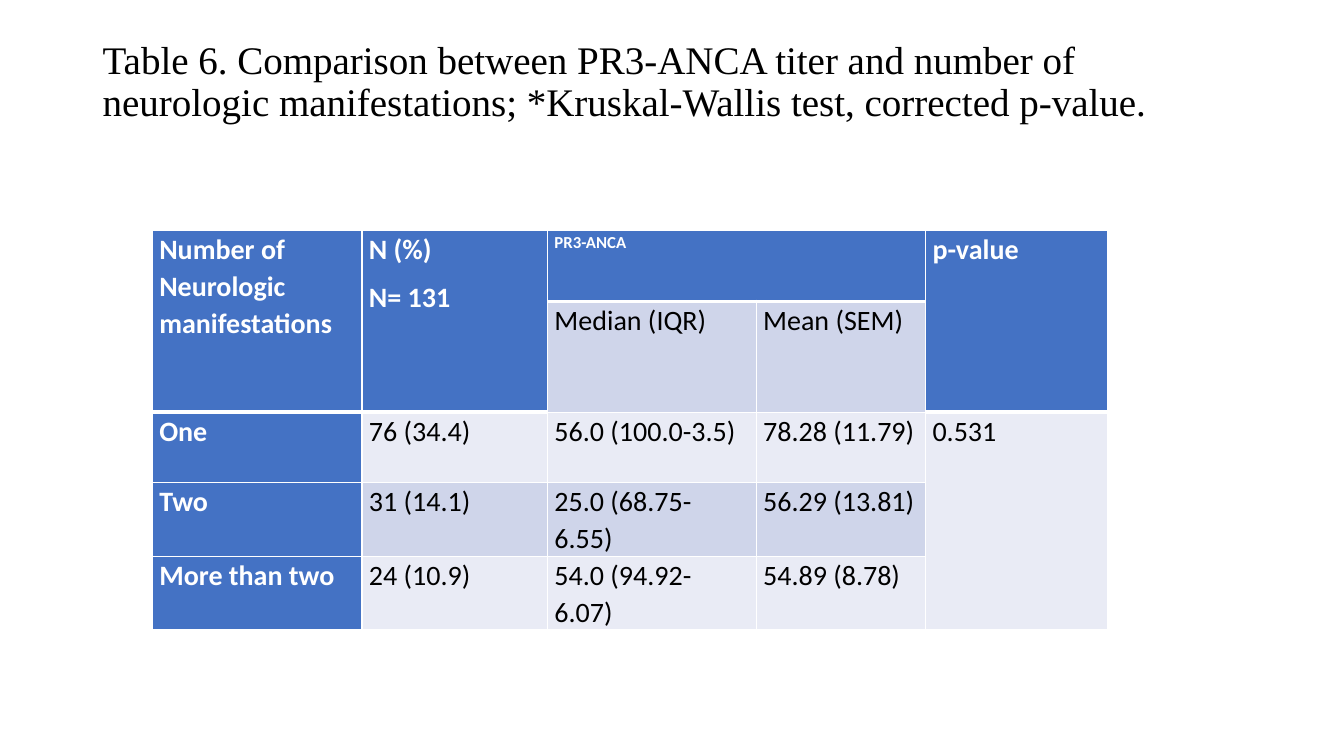
from lxml import etree
from pptx import Presentation
from pptx.dml.color import RGBColor
from pptx.enum import text
from pptx.oxml import ns
from pptx.util import Inches, Pt

COLORS = {"ink": "000000", "white": "FFFFFF", "header": "4472C4",
          "dark_band": "CFD5EA", "light_band": "E9EBF5"}

TITLE = ("Table 6. Comparison between PR3-ANCA titer and number of neurologic "
         "manifestations; *Kruskal-Wallis test, corrected p-value.")
COLUMN_WIDTHS = [2.08, 1.84, 2.07, 1.68, 1.81]
ROW_HEIGHTS = [0.7, 1.1, 0.7, 0.73, 0.73]
ROWS = [
    ["Number of Neurologic manifestations", "N (%)\nN= 131", "PR3-ANCA", "", "p-value"],
    ["", "", "Median (IQR)", "Mean (SEM)", ""],
    ["One", "76 (34.4)", "56.0 (100.0-3.5)", "78.28 (11.79)", "0.531"],
    ["Two", "31 (14.1)", "25.0 (68.75-6.55)", "56.29 (13.81)", ""],
    ["More than two", "24 (10.9)", "54.0 (94.92-6.07)", "54.89 (8.78)", ""],
]
# First and last cell of each merged area, as (row, column)
MERGES = [((0, 0), (1, 0)), ((0, 1), (1, 1)), ((0, 2), (0, 3)),
          ((0, 4), (1, 4)), ((2, 4), (4, 4))]
HEADING_SIZES = {"PR3-ANCA": 12}


def rgb(name):
    return RGBColor.from_string(COLORS[name])


def add_title(slide, left, top, width, height):
    frame = slide.shapes.add_textbox(
        Inches(left), Inches(top), Inches(width), Inches(height)).text_frame
    frame.word_wrap = True
    frame.vertical_anchor = text.MSO_ANCHOR.TOP
    frame.margin_top = 0
    heading = frame.paragraphs[0]
    heading.text = TITLE
    heading.line_spacing = 0.9
    heading.font.name = "Times New Roman"
    heading.font.size = Pt(27.9)
    heading.font.color.rgb = rgb("ink")


def draw_borders(cell, widths):
    properties = cell._tc.get_or_add_tcPr()
    for side, width in widths.items():
        line = etree.SubElement(properties, ns.qn(f"a:ln{side}"), w=str(Pt(width)))
        fill = etree.SubElement(line, ns.qn("a:solidFill"))
        etree.SubElement(fill, ns.qn("a:srgbClr"), val=COLORS["white"])


def style_cell(cell, content, fill, is_heading, is_column_heading):
    draw_borders(cell, {"L": 1, "R": 1, "B": 3 if is_column_heading else 1})
    cell.fill.solid()
    cell.fill.fore_color.rgb = rgb(fill)
    cell.margin_left = cell.margin_right = Inches(0.07)
    cell.margin_top = cell.margin_bottom = 0
    cell.text = content
    for paragraph in cell.text_frame.paragraphs:
        paragraph.line_spacing = 1.07
        paragraph.space_after = Pt(8)
        paragraph.font.name = "Calibri"
        paragraph.font.size = Pt(HEADING_SIZES.get(content, 20))
        paragraph.font.bold = is_heading
        paragraph.font.color.rgb = rgb("white" if is_heading else "ink")


def add_titer_table(slide, left, top):
    titers = slide.shapes.add_table(
        len(ROWS), len(COLUMN_WIDTHS), Inches(left), Inches(top),
        Inches(sum(COLUMN_WIDTHS)), Inches(sum(ROW_HEIGHTS))).table
    for column, width in zip(titers.columns, COLUMN_WIDTHS):
        column.width = Inches(width)
    for row, height in zip(titers.rows, ROW_HEIGHTS):
        row.height = Inches(height)
    for first, last in MERGES:
        titers.cell(*first).merge(titers.cell(*last))

    # Headings are blue; body rows alternate between two bands
    for r, contents in enumerate(ROWS):
        for c, content in enumerate(contents):
            is_column_heading = r == 0 or (r == 1 and c in (0, 1, 4))
            is_heading = is_column_heading or c == 0
            band = "dark_band" if r % 2 else "light_band"
            style_cell(titers.cell(r, c), content, "header" if is_heading else band,
                       is_heading, is_column_heading)


def main():
    deck = Presentation()
    deck.slide_width, deck.slide_height = Inches(13.33), Inches(7.5)
    slide = deck.slides.add_slide(deck.slide_layouts[6])
    add_title(slide, 0.92, 0.4, 11.5, 1.45)
    add_titer_table(slide, 1.51, 2.29)
    deck.save("out.pptx")


if __name__ == "__main__":
    main()
